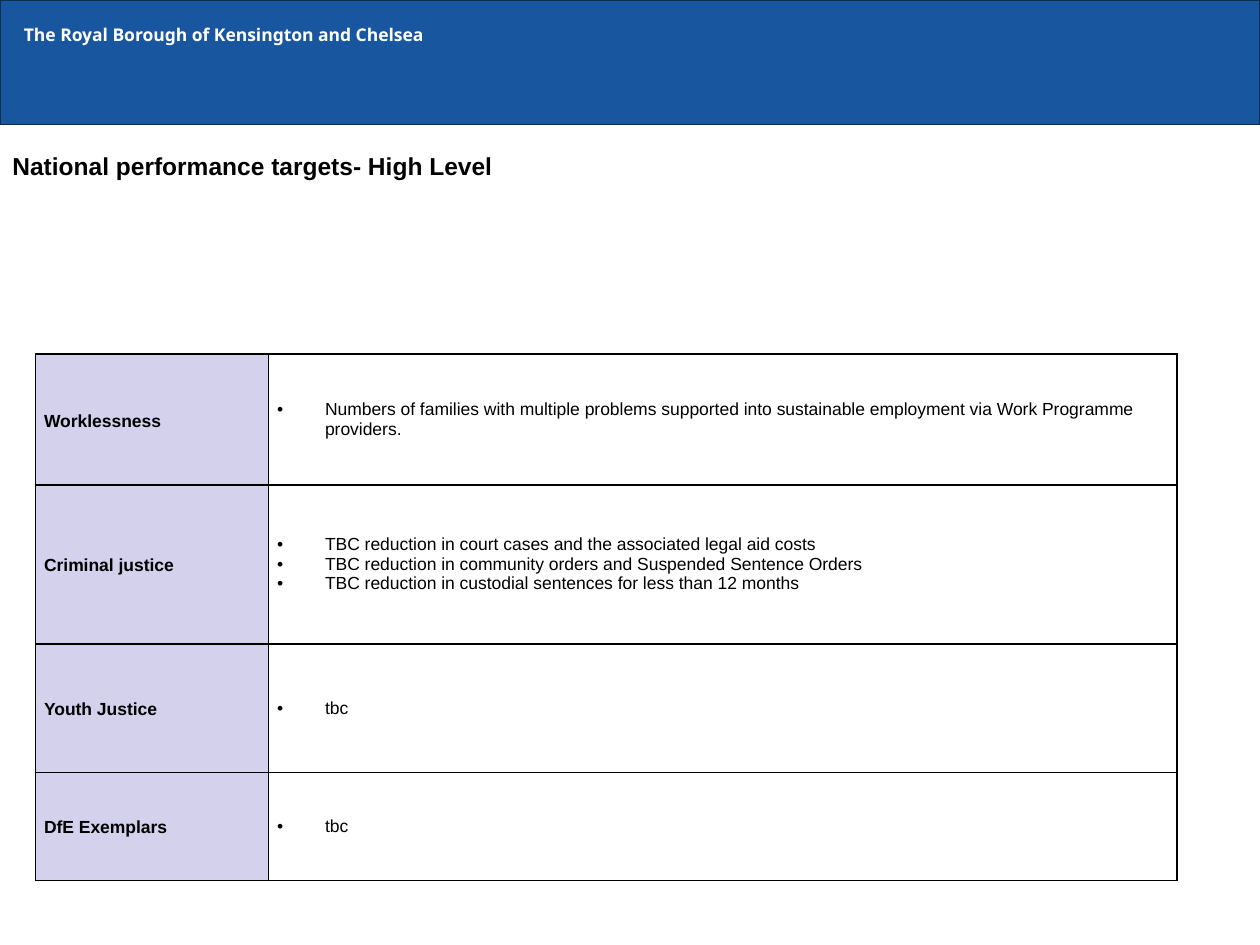
"""Build the slide of high-level national performance targets."""
from lxml import etree
from pptx import Presentation
from pptx import util as u
from pptx.dml.color import RGBColor
from pptx.enum import shapes, text
from pptx.oxml.ns import qn

BOROUGH = "The Royal Borough of Kensington and Chelsea"
HEADING = "National performance targets- High Level"
TARGETS = [
    ("Worklessness", 1.04, [
        "Numbers of families with multiple problems supported into "
        "sustainable employment via Work Programme providers."]),
    ("Criminal justice", 1.26, [
        "TBC reduction in court cases and the associated legal aid costs",
        "TBC reduction in community orders and Suspended Sentence Orders",
        "TBC reduction in custodial sentences for less than 12 months"]),
    ("Youth Justice", 1.02, ["tbc"]),
    ("DfE Exemplars", 0.86, ["tbc"]),
]
COLUMNS = [1.85, 7.21]
WIDTH, HEIGHT = 10, 7.5
BLUE, EDGE, LILAC, WHITE, BLACK = "1856A0", "0B2F4D", "D3D1EC", "FFFFFF", "000000"


def colour(value):
    return RGBColor.from_string(value)


def style(paragraph, size, face="Arial", ink=BLACK, bold=True):
    paragraph.alignment = text.PP_ALIGN.LEFT
    font = paragraph.font
    font.size, font.name, font.bold = u.Pt(size), face, bold
    font.color.rgb = colour(ink)


def write_line(shape, words, left, top, size, **look):
    frame = shape.text_frame
    frame.word_wrap = True
    frame.vertical_anchor = text.MSO_ANCHOR.TOP
    frame.margin_left, frame.margin_top = u.Inches(left), u.Inches(top)
    frame.text = words
    style(frame.paragraphs[0], size, **look)


def add_bullet(paragraph):
    props = paragraph._p.get_or_add_pPr()
    indent = u.Inches(0.38)
    props.set("marL", str(indent))
    props.set("indent", str(-indent))
    etree.SubElement(props, qn("a:buFont"), typeface="Arial")
    etree.SubElement(props, qn("a:buChar"), char="•")


def add_borders(cell):
    props = cell._tc.get_or_add_tcPr()
    for position, side in enumerate(("a:lnL", "a:lnR", "a:lnT", "a:lnB")):
        border = etree.Element(qn(side), w=str(u.Pt(1)))
        fill = etree.SubElement(border, qn("a:solidFill"))
        etree.SubElement(fill, qn("a:srgbClr"), val=BLACK)
        props.insert(position, border)


def fill_cell(cell, lines, is_label):
    cell.margin_left = cell.margin_right = u.Inches(0.07)
    cell.margin_top = cell.margin_bottom = 0
    cell.vertical_anchor = text.MSO_ANCHOR.MIDDLE
    cell.text = "\n".join(lines)
    for paragraph in cell.text_frame.paragraphs:
        style(paragraph, 10, bold=is_label)
        if is_label:
            paragraph.line_spacing, paragraph.space_after = 1.15, u.Pt(10)
        else:
            add_bullet(paragraph)
    if is_label:
        cell.fill.solid()
        cell.fill.fore_color.rgb = colour(LILAC)
    else:
        cell.fill.background()
    add_borders(cell)


def add_targets(slide):
    heights = [height for _, height, _ in TARGETS]
    table = slide.shapes.add_table(
        len(TARGETS), len(COLUMNS), u.Inches(0.28), u.Inches(2.81),
        u.Inches(sum(COLUMNS)), u.Inches(sum(heights))).table
    table.first_row = table.horz_banding = False
    for column, width in zip(table.columns, COLUMNS):
        column.width = u.Inches(width)
    for row, (label, height, goals) in zip(table.rows, TARGETS):
        row.height = u.Inches(height)
        fill_cell(row.cells[0], [label], True)
        fill_cell(row.cells[1], goals, False)


def main():
    deck = Presentation()
    deck.slide_width, deck.slide_height = u.Inches(WIDTH), u.Inches(HEIGHT)
    slide = deck.slides.add_slide(deck.slide_layouts[6])

    banner = slide.shapes.add_shape(
        shapes.MSO_SHAPE.RECTANGLE, 0, 0, deck.slide_width, u.Inches(0.99))
    banner.shadow.inherit = False
    banner.fill.solid()
    banner.fill.fore_color.rgb = colour(BLUE)
    banner.line.color.rgb = colour(EDGE)
    banner.line.width = u.Pt(0.75)
    write_line(banner, BOROUGH, 0.19, 0.19, 10, face="Noto Sans", ink=WHITE)

    add_targets(slide)

    heading = slide.shapes.add_textbox(
        0, u.Inches(1.13), deck.slide_width, u.Inches(0.64))
    write_line(heading, HEADING, 0.1, 0.07, 14)
    deck.save("out.pptx")


if __name__ == "__main__":
    main()
